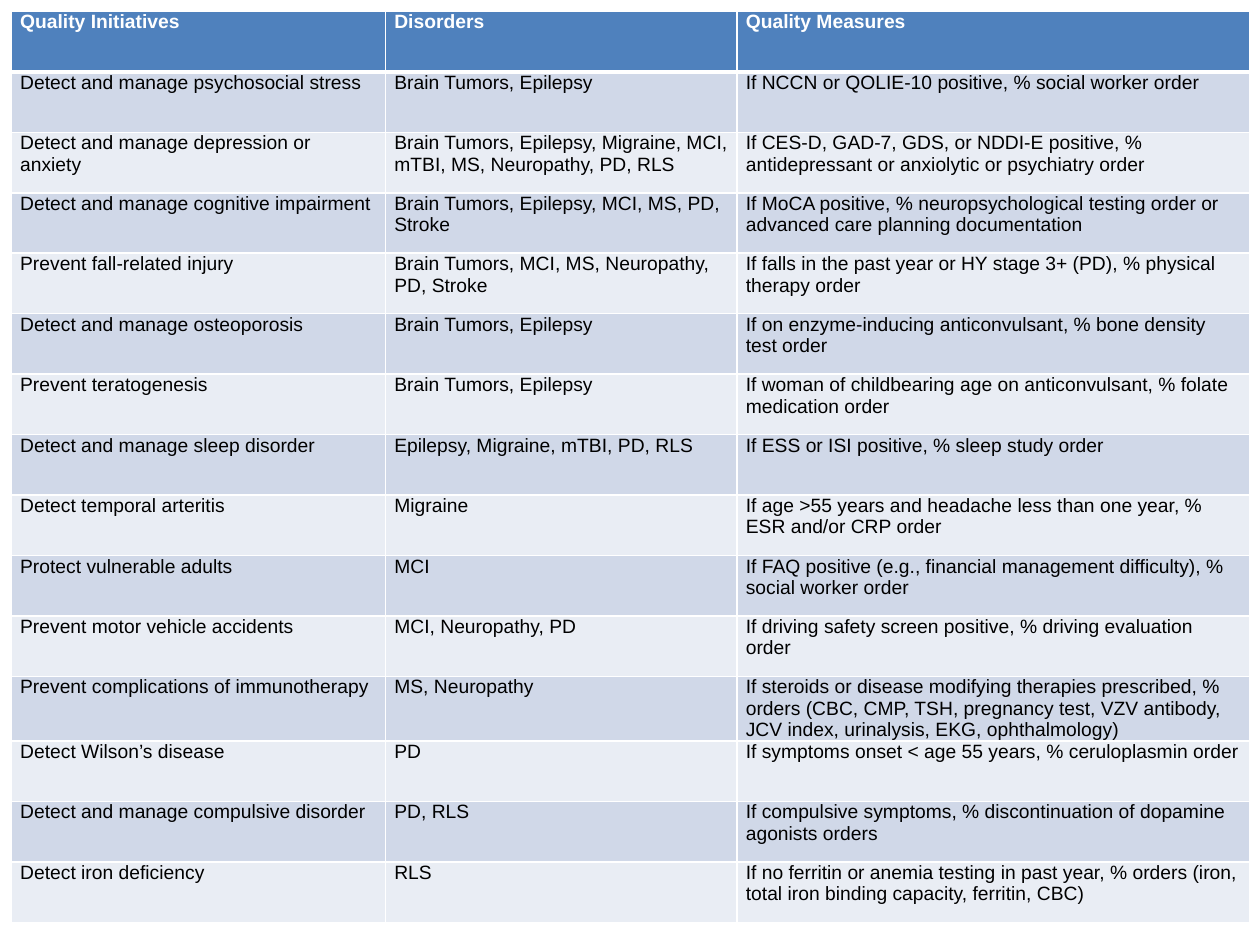
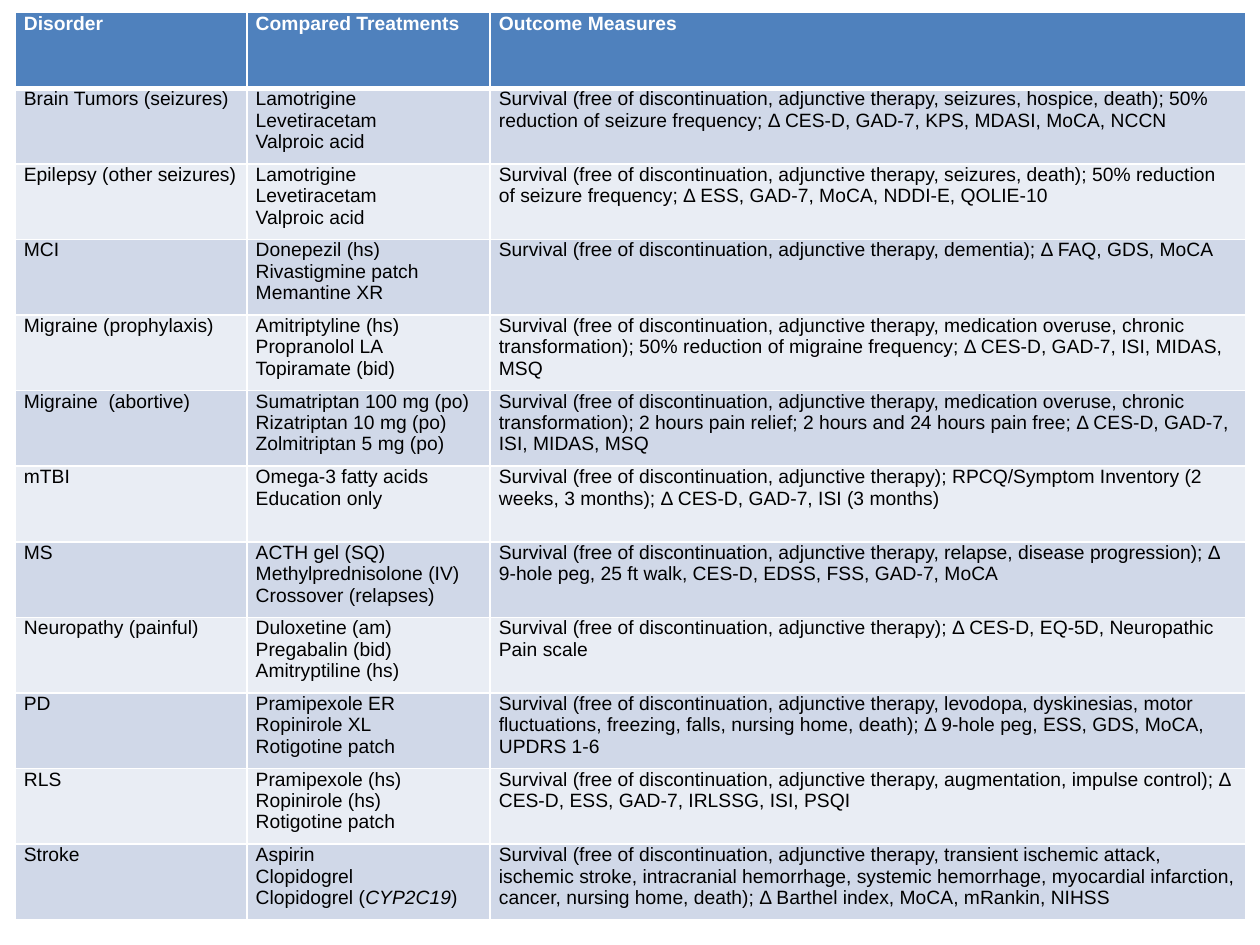
"""Build two table slides on neurology quality measures and treatment outcomes."""
from lxml import etree
from pptx import Presentation
from pptx import util as u
from pptx.dml.color import RGBColor
from pptx.oxml.ns import qn

COLORS = {"header": "4F81BD", "odd": "D0D8E8", "even": "E9EDF4",
          "line": "FFFFFF", "header_text": "FFFFFF", "text": "000000"}
FONT, FONT_SIZE = "Arial", 11
FREE = "Survival (free of discontinuation, adjunctive therapy"

QUALITY_ROWS = [
    ("Quality Initiatives", "Disorders", "Quality Measures"),
    ("Detect and manage psychosocial stress", "Brain Tumors, Epilepsy",
     "If NCCN or QOLIE-10 positive, % social worker order"),
    ("Detect and manage depression or anxiety",
     "Brain Tumors, Epilepsy, Migraine, MCI, mTBI, MS, Neuropathy, PD, RLS",
     "If CES-D, GAD-7, GDS, or NDDI-E positive, % antidepressant or anxiolytic "
     "or psychiatry order"),
    ("Detect and manage cognitive impairment", "Brain Tumors, Epilepsy, MCI, MS, PD, Stroke",
     "If MoCA positive, % neuropsychological testing order or advanced care "
     "planning documentation"),
    ("Prevent fall-related injury", "Brain Tumors, MCI, MS, Neuropathy, PD, Stroke",
     "If falls in the past year or HY stage 3+ (PD), % physical therapy order"),
    ("Detect and manage osteoporosis", "Brain Tumors, Epilepsy",
     "If on enzyme-inducing anticonvulsant, % bone density test order"),
    ("Prevent teratogenesis", "Brain Tumors, Epilepsy",
     "If woman of childbearing age on anticonvulsant, % folate medication order"),
    ("Detect and manage sleep disorder", "Epilepsy, Migraine, mTBI, PD, RLS",
     "If ESS or ISI positive, % sleep study order"),
    ("Detect temporal arteritis", "Migraine",
     "If age >55 years and headache less than one year, % ESR and/or CRP order"),
    ("Protect vulnerable adults", "MCI",
     "If FAQ positive (e.g., financial management difficulty), % social worker order"),
    ("Prevent motor vehicle accidents", "MCI, Neuropathy, PD",
     "If driving safety screen positive, % driving evaluation order"),
    ("Prevent complications of immunotherapy", "MS, Neuropathy",
     "If steroids or disease modifying therapies prescribed, % orders (CBC, CMP, TSH, "
     "pregnancy test, VZV antibody, JCV index, urinalysis, EKG, ophthalmology)"),
    ("Detect Wilson’s disease", "PD",
     "If symptoms onset < age 55 years, % ceruloplasmin order"),
    ("Detect and manage compulsive disorder", "PD, RLS",
     "If compulsive symptoms, % discontinuation of dopamine agonists orders"),
    ("Detect iron deficiency", "RLS",
     "If no ferritin or anemia testing in past year, % orders (iron, total iron "
     "binding capacity, ferritin, CBC)"),
]

TREATMENT_ROWS = [
    ("Disorder", "Compared Treatments", "Outcome Measures"),
    ("Brain Tumors (seizures)", "Lamotrigine\nLevetiracetam\nValproic acid",
     f"{FREE}, seizures, hospice, death); 50% reduction of seizure frequency; "
     "Δ CES-D, GAD-7, KPS, MDASI, MoCA, NCCN"),
    ("Epilepsy (other seizures)", "Lamotrigine\nLevetiracetam\nValproic acid",
     f"{FREE}, seizures, death); 50% reduction of seizure frequency; "
     "Δ ESS, GAD-7, MoCA, NDDI-E, QOLIE-10"),
    ("MCI", "Donepezil (hs)\nRivastigmine patch\nMemantine XR",
     f"{FREE}, dementia); Δ FAQ, GDS, MoCA"),
    ("Migraine (prophylaxis)", "Amitriptyline (hs)\nPropranolol LA\nTopiramate (bid)",
     f"{FREE}, medication overuse, chronic transformation); 50% reduction of "
     "migraine frequency; Δ CES-D, GAD-7, ISI, MIDAS, MSQ"),
    ("Migraine  (abortive)",
     "Sumatriptan 100 mg (po)\nRizatriptan 10 mg (po)\nZolmitriptan 5 mg (po)",
     f"{FREE}, medication overuse, chronic transformation); 2 hours pain relief; "
     "2 hours and 24 hours pain free; Δ CES-D, GAD-7, ISI, MIDAS, MSQ"),
    ("mTBI", "Omega-3 fatty acids\nEducation only",
     f"{FREE}); RPCQ/Symptom Inventory (2 weeks, 3 months); "
     "Δ CES-D, GAD-7, ISI (3 months)"),
    ("MS", "ACTH gel (SQ)\nMethylprednisolone (IV)\nCrossover (relapses)",
     f"{FREE}, relapse, disease progression); "
     "Δ 9-hole peg, 25 ft walk, CES-D, EDSS, FSS, GAD-7, MoCA"),
    ("Neuropathy (painful)", "Duloxetine (am)\nPregabalin (bid)\nAmitryptiline (hs)",
     f"{FREE}); Δ CES-D, EQ-5D, Neuropathic Pain scale"),
    ("PD", "Pramipexole ER\nRopinirole XL\nRotigotine patch",
     f"{FREE}, levodopa, dyskinesias, motor fluctuations, freezing, falls, "
     "nursing home, death); Δ 9-hole peg, ESS, GDS, MoCA, UPDRS 1-6"),
    ("RLS", "Pramipexole (hs)\nRopinirole (hs)\nRotigotine patch",
     f"{FREE}, augmentation, impulse control); Δ CES-D, ESS, GAD-7, IRLSSG, ISI, PSQI"),
    ("Stroke", "Aspirin\nClopidogrel\nClopidogrel (*CYP2C19*)",
     f"{FREE}, transient ischemic attack, ischemic stroke, intracranial hemorrhage, "
     "systemic hemorrhage, myocardial infarction, cancer, nursing home, death); "
     "Δ Barthel index, MoCA, mRankin, NIHSS"),
]


def set_borders(cell, top, bottom):
    """Draw the four cell borders, with top and bottom widths in points."""
    properties = cell._tc.get_or_add_tcPr()
    for side, width in (("L", 1), ("R", 1), ("T", top), ("B", bottom)):
        line = etree.SubElement(properties, qn(f"a:ln{side}"), w=str(u.Pt(width)))
        fill = etree.SubElement(line, qn("a:solidFill"))
        etree.SubElement(fill, qn("a:srgbClr"), val=COLORS["line"])


def write_text(cell, content, color, bold):
    """Write one paragraph per line; text between asterisks is italic."""
    cell.margin_left = cell.margin_right = u.Inches(0.07)
    cell.margin_top = cell.margin_bottom = 0
    frame = cell.text_frame
    for index, line in enumerate(content.split("\n")):
        paragraph = frame.add_paragraph() if index else frame.paragraphs[0]
        for part_index, part in enumerate(line.split("*")):
            run = paragraph.add_run()
            run.text = part
            if part_index % 2:
                run.font.italic = True
        font = paragraph.font
        font.name, font.size, font.bold = FONT, u.Pt(FONT_SIZE), bold
        font.color.rgb = RGBColor.from_string(COLORS[color])


def add_banded_table(slide, left, top, widths, row_height, rows):
    """Add a table with a coloured header and alternating body rows."""
    frame = slide.shapes.add_table(
        len(rows), len(widths), u.Inches(left), u.Inches(top),
        u.Inches(sum(widths)), u.Inches(row_height * len(rows)))
    table = frame.table
    for column, width in zip(table.columns, widths):
        column.width = u.Inches(width)
    for row_index, row in enumerate(rows):
        table.rows[row_index].height = u.Inches(row_height)
        is_header = row_index == 0
        band = "header" if is_header else "odd" if row_index % 2 else "even"
        for column_index, content in enumerate(row):
            cell = table.cell(row_index, column_index)
            set_borders(cell, top=3 if row_index == 1 else 1, bottom=3 if is_header else 1)
            cell.fill.solid()
            cell.fill.fore_color.rgb = RGBColor.from_string(COLORS[band])
            write_text(cell, content, "header_text" if is_header else "text", is_header)


def main():
    """Create the presentation and save it."""
    presentation = Presentation()
    presentation.slide_width, presentation.slide_height = u.Inches(10), u.Inches(7.5)
    blank = presentation.slide_layouts[6]
    add_banded_table(presentation.slides.add_slide(blank), 0.09, 0.09,
                     (2.97, 2.79, 4.07), 0.48, QUALITY_ROWS)
    add_banded_table(presentation.slides.add_slide(blank), 0.12, 0.1,
                     (1.84, 1.93, 6), 0.6, TREATMENT_ROWS)
    presentation.save("out.pptx")


if __name__ == "__main__":
    main()
